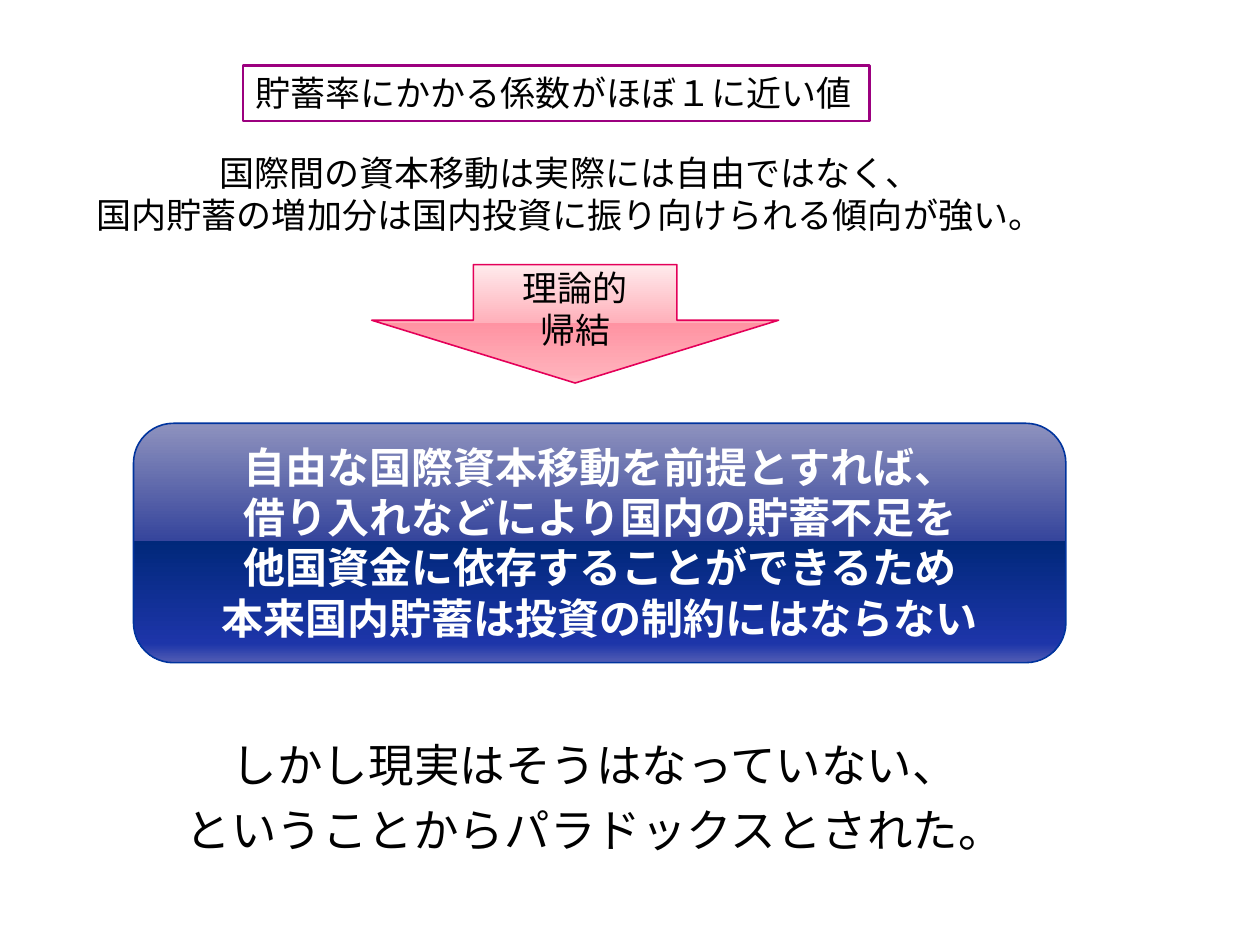
from lxml import etree
from pptx import Presentation
from pptx.dml.color import RGBColor
from pptx.enum.lang import MSO_LANGUAGE_ID
from pptx.enum.shapes import MSO_SHAPE
from pptx.enum.text import MSO_ANCHOR, PP_ALIGN
from pptx.oxml.ns import qn
from pptx.util import Inches, Pt

RECT, ROUND, DOWN = MSO_SHAPE.RECTANGLE, MSO_SHAPE.ROUNDED_RECTANGLE, MSO_SHAPE.DOWN_ARROW
TOP, MIDDLE = MSO_ANCHOR.TOP, MSO_ANCHOR.MIDDLE
LEFT, CENTER = PP_ALIGN.LEFT, PP_ALIGN.CENTER
JAPANESE = MSO_LANGUAGE_ID.JAPANESE

THEME = {
    "font": "Cabin",
    "text": 20, "claim": 24, "close": 26,
    "black": "000000", "white": "FFFFFF",
    "purple": "9C007F", "navy": "00349E", "rose": "E40059",
    "blues": [(0, "8E92BE"), (49, "36459C"), (49, "00287A"), (92, "1D35A9"), (100, "525DB4")],
    "pinks": [(0, "FFEAEC"), (49, "FFB0BA"), (49, "FF93A2"), (92, "FFB0BA"), (100, "FFBDC5")],
}


def write(shape, lines, size, color="black", align=CENTER, anchor=TOP, bold=False, wrap=True):
    frame = shape.text_frame
    frame.text = "\n".join(lines)
    frame.word_wrap = wrap
    frame.vertical_anchor = anchor
    for para in frame.paragraphs:
        para.alignment = align
        for run in para.runs:
            font = run.font
            font.name = THEME["font"]
            font.size = Pt(THEME[size])
            font.bold = bold
            font.language_id = JAPANESE
            font.color.rgb = RGBColor.from_string(THEME[color])


def paint(shape, line, width, stops=None):
    shape.shadow.inherit = False
    shape.line.color.rgb = RGBColor.from_string(THEME[line])
    shape.line.width = Pt(width)
    if stops is None:
        shape.fill.solid()
        shape.fill.fore_color.rgb = RGBColor.from_string(THEME["white"])
        return
    # Downward gradient with its own list of stops
    shape.fill.gradient()
    grad = shape._element.spPr.find(qn("a:gradFill"))
    for child in list(grad):
        grad.remove(child)
    group = etree.SubElement(grad, qn("a:gsLst"))
    for pos, color in THEME[stops]:
        stop = etree.SubElement(group, qn("a:gs"), pos=str(pos * 1000))
        etree.SubElement(stop, qn("a:srgbClr"), val=color)
    etree.SubElement(grad, qn("a:lin"), ang="5400000", scaled="0")


deck = Presentation()
deck.slide_width, deck.slide_height = Inches(10), Inches(7.5)
shapes = deck.slides.add_slide(deck.slide_layouts[6]).shapes

# Closing remark
close = shapes.add_textbox(Inches(0.75), Inches(5.8), Inches(7.95), Inches(1.26))
write(close, ["しかし現実はそうはなっていない、", "ということからパラドックスとされた。"], "close")
for para in close.text_frame.paragraphs:
    props = para._p.get_or_add_pPr()
    props.set("marL", str(Inches(0.3)))
    props.set("indent", str(Inches(-0.3)))
close.text_frame.paragraphs[1].space_before = Pt(6)

# What the finding means
meaning = shapes.add_textbox(Inches(0.43), Inches(1.15), Inches(8.19), Inches(0.77))
write(meaning, ["国際間の資本移動は実際には自由ではなく、",
                "国内貯蓄の増加分は国内投資に振り向けられる傾向が強い。"], "text")

# Finding in a frame
finding = shapes.add_shape(RECT, Inches(1.93), Inches(0.52), Inches(4.97), Inches(0.44))
paint(finding, "purple", 1.5)
write(finding, ["貯蓄率にかかる係数がほぼ１に近い値"], "text", align=LEFT, wrap=False)

# Theoretical claim
claim = shapes.add_shape(ROUND, Inches(1.06), Inches(3.36), Inches(7.4), Inches(1.9))
paint(claim, "navy", 0.9, "blues")
write(claim, ["自由な国際資本移動を前提とすれば、",
              "借り入れなどにより国内の貯蓄不足を",
              "他国資金に依存することができるため",
              "本来国内貯蓄は投資の制約にはならない"], "claim", color="white", bold=True)

# Arrow leading to the claim
arrow = shapes.add_shape(DOWN, Inches(2.95), Inches(2.1), Inches(3.23), Inches(0.94))
arrow.adjustments[0] = 0.5
arrow.adjustments[1] = 0.53
paint(arrow, "rose", 0.9, "pinks")
write(arrow, ["理論的", "帰結"], "text", anchor=MIDDLE)

deck.save("out.pptx")
